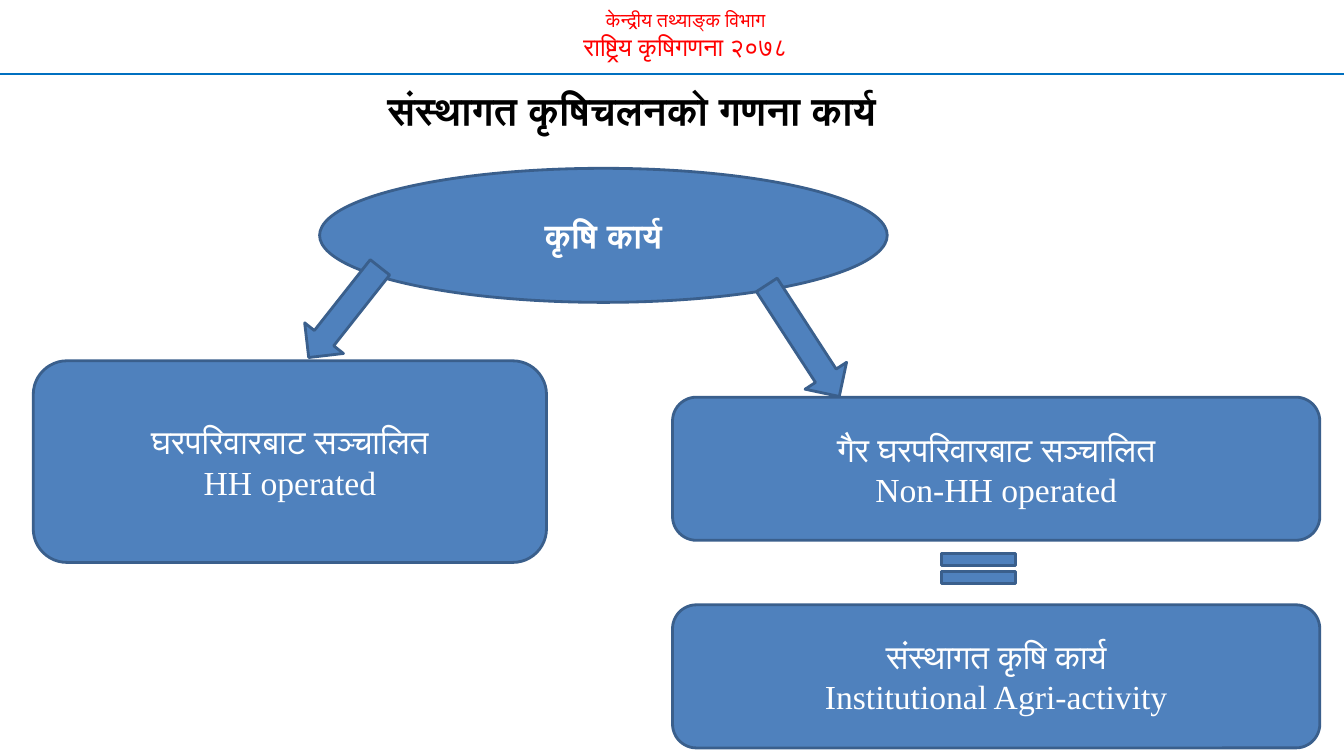
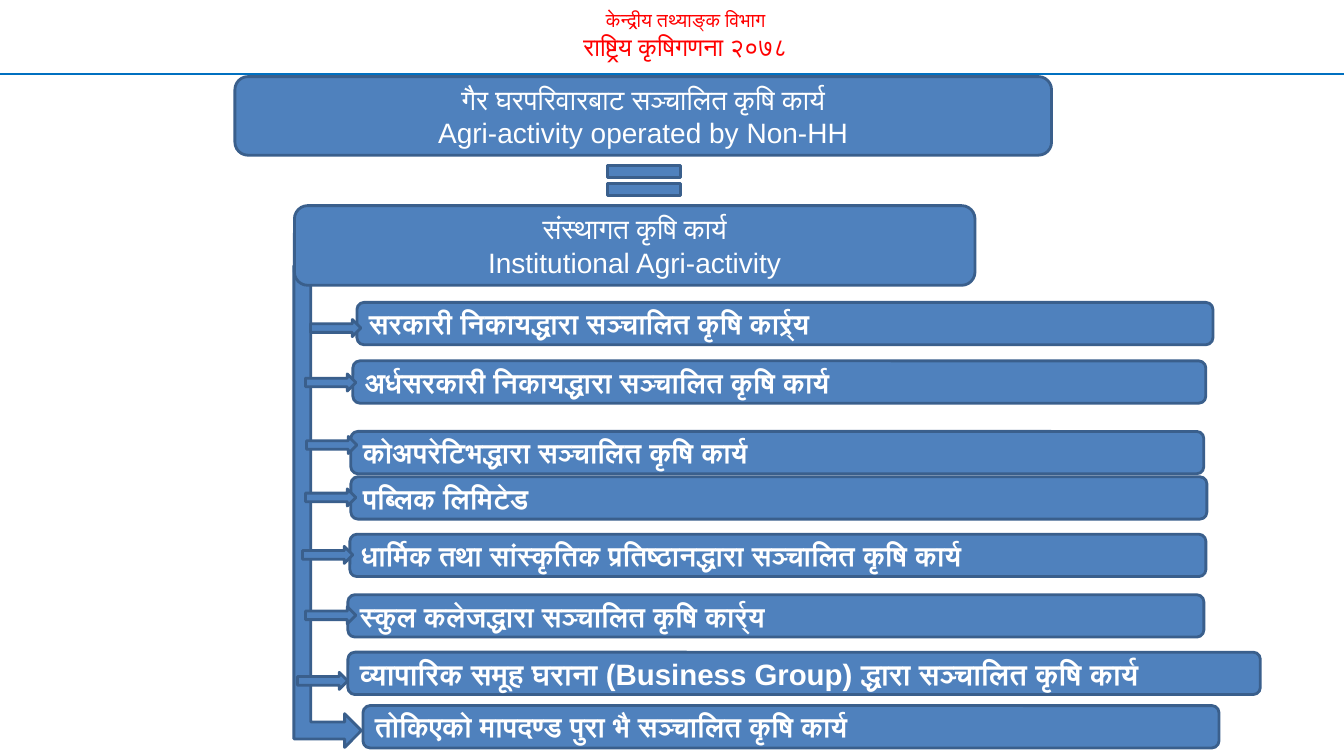
from dataclasses import dataclass
from pptx import Presentation
from pptx.dml.color import RGBColor as RGB
from pptx.enum.shapes import MSO_CONNECTOR as CONN, MSO_SHAPE as SHAPE
from pptx.enum.text import MSO_ANCHOR as ANCHOR, MSO_AUTO_SIZE as FIT, PP_ALIGN as ALIGN
from pptx.oxml.ns import qn
from pptx.util import Inches, Pt
from lxml import etree


@dataclass(frozen=True)
class Theme:
    fill: RGB = RGB.from_string("4F81BD")
    line: RGB = RGB.from_string("3A5F8C")
    rule: RGB = RGB.from_string("0070C0")
    header: RGB = RGB.from_string("FF0000")
    title: RGB = RGB.from_string("000000")
    text: RGB = RGB.from_string("FFFFFF")
    font: str = "Calibri"
    sans: str = "Arial"
    serif: str = "Times New Roman"
    title_size: int = 28
    box_size: int = 24
    bar_size: int = 20
    group_size: int = 21
    outline: float = 2
    rule_width: float = 1.5


T = Theme()
W, H = 13.33, 7.5

# Content
HEADER = [("केन्द्रीय तथ्याङ्क विभाग", 14), ("राष्ट्रिय कृषिगणना २०७८", 18)]
TITLE = "संस्थागत कृषिचलनको गणना कार्य"
ROOT = "कृषि कार्य"
INSTITUTIONAL = ("संस्थागत कृषि कार्य", "Institutional Agri-activity")
NON_HH = ("गैर घरपरिवारबाट सञ्चालित कृषि कार्य", "Agri-activity operated by Non-HH")
BRANCHES = [  # labels, box
    (("घरपरिवारबाट सञ्चालित", "HH operated"), (0.33, 3.58, 5.09, 2)),
    (("गैर घरपरिवारबाट सञ्चालित", "Non-HH operated"), (6.67, 3.94, 6.42, 1.42)),
    (INSTITUTIONAL, (6.67, 6, 6.42, 1.42)),
]
BRANCH_ARROWS = [((3.17, 2.53, 0.49, 1.14), 38.3), ((7.72, 2.72, 0.49, 1.32), 327)]
GROUP = [("व्यापारिक समूह घराना ", T.font), ("(Business Group) ", T.sans),
         ("द्धारा सञ्चालित कृषि कार्य", T.font)]
OPERATORS = [  # text, bar (left, top, width), arrow (left, top)
    ("सरकारी निकायद्धारा सञ्चालित कृषि कार्र्र्य", (3.54, 3, 8.49), (3.08, 3.17)),
    ("अर्धसरकारी निकायद्धारा सञ्चालित कृषि कार्य", (3.5, 3.58, 8.46), (3.03, 3.71)),
    ("कोअपरेटिभद्धारा सञ्चालित कृषि कार्य", (3.48, 4.28, 8.46), (3.04, 4.33)),
    ("पब्लिक लिमिटेड", (3.48, 4.73, 8.49), (3.03, 4.85)),
    ("धार्मिक तथा सांस्कृतिक प्रतिष्ठानद्धारा सञ्चालित कृषि कार्य", (3.47, 5.3, 8.49), (3, 5.42)),
    ("स्कुल कलेजद्धारा सञ्चालित कृषि कार्र्य", (3.45, 5.9, 8.49), (3.03, 6.02)),
    (GROUP, (3.45, 6.47, 9.05), (2.95, 6.67)),
    ("तोकिएको मापदण्ड पुरा भै सञ्चालित कृषि कार्य", (3.6, 7, 8.49), None),
]
BAR_H = 0.42
ARROW = (0.5, 0.17)
EQUAL = (0.99, 0.5)


def inches(box):
    return [Inches(v) for v in box]


def write(p, runs, size, color, font=T.font, bold=False, align=ALIGN.CENTER):
    """Fill one paragraph; runs is a string or a list of (text, font)."""
    p.alignment = align
    p.font.size, p.font.bold, p.font.color.rgb = Pt(size), bold, color
    if isinstance(runs, str):
        p.font.name = font
        p.add_run().text = runs
    else:
        for text, name in runs:
            r = p.add_run()
            r.text, r.font.name = text, name


def add_block(s, kind, box, rotation=0):
    sp = s.shapes.add_shape(kind, *inches(box))
    sp.shadow.inherit = False
    sp.rotation = rotation
    sp.fill.solid()
    sp.fill.fore_color.rgb = T.fill
    sp.line.color.rgb = T.line
    sp.line.width = Pt(T.outline)
    return sp


def add_pair(s, labels, box, size, fonts):
    """Rounded box with a Nepali line above an English one."""
    tf = add_block(s, SHAPE.ROUNDED_RECTANGLE, box).text_frame
    for i, (label, font) in enumerate(zip(labels, fonts)):
        p = tf.add_paragraph() if i else tf.paragraphs[0]
        write(p, label, size, T.text, font)


def add_header(prs, s):
    """Draw the header band and hand it to the slide master."""
    box = s.shapes.add_textbox(*inches((1.25, 0.03, 11.1, 0.64)))
    tf = box.text_frame
    tf.word_wrap = True
    for i, (text, size) in enumerate(HEADER):
        p = tf.add_paragraph() if i else tf.paragraphs[0]
        write(p, text, size, T.header)
    rule = s.shapes.add_connector(CONN.STRAIGHT, *inches((0, 0.73, W, 0.73)))
    rule.line.color.rgb = T.rule
    rule.line.width = Pt(T.rule_width)
    etree.SubElement(rule._element.spPr, qn("a:effectLst"))
    for part in (box, rule):
        prs.slide_master.shapes._spTree.append(part._element)


def build_overview(s):
    # Title
    title = s.shapes.title
    title.left, title.top, title.width, title.height = inches((1.87, 0.81, 8.79, 0.86))
    tf = title.text_frame
    tf.auto_size, tf.vertical_anchor = FIT.NONE, ANCHOR.TOP
    write(tf.paragraphs[0], TITLE, T.title_size, T.title, bold=True)
    # Tree
    root = add_block(s, SHAPE.OVAL, (3.17, 1.67, 5.63, 1.33))
    write(root.text_frame.paragraphs[0], ROOT, T.box_size, T.text, bold=True)
    for labels, box in BRANCHES:
        add_pair(s, labels, box, T.box_size, (T.font, T.serif))
    for box, rotation in BRANCH_ARROWS:
        add_block(s, SHAPE.DOWN_ARROW, box, rotation)
    add_block(s, SHAPE.MATH_EQUAL, (9.21, 5.39, *EQUAL))


def build_operators(s):
    # Bars
    add_pair(s, NON_HH, (2.33, 0.76, 8.1, 0.78), T.bar_size, (T.font, T.sans))
    for text, bar, _ in OPERATORS:
        sp = add_block(s, SHAPE.ROUNDED_RECTANGLE, (*bar, BAR_H))
        size = T.group_size if text is GROUP else T.bar_size
        write(sp.text_frame.paragraphs[0], text, size, T.text, bold=True, align=ALIGN.LEFT)
    # Trunk and its arrows
    add_block(s, SHAPE.BENT_UP_ARROW, (0.86, 4.69, 4.78, 0.67), 90)
    for _, _, arrow in OPERATORS:
        if arrow:
            add_block(s, SHAPE.RIGHT_ARROW, (*arrow, *ARROW))
    # Equivalence
    add_block(s, SHAPE.MATH_EQUAL, (5.89, 1.54, *EQUAL))
    add_pair(s, INSTITUTIONAL, (2.92, 2.04, 6.75, 0.79), T.bar_size, (T.font, T.sans))


def main():
    prs = Presentation()
    prs.slide_width, prs.slide_height = inches((W, H))
    title_only, blank = prs.slide_layouts[5], prs.slide_layouts[6]
    overview = prs.slides.add_slide(title_only)
    add_header(prs, overview)
    build_overview(overview)
    build_operators(prs.slides.add_slide(blank))
    prs.save("out.pptx")


if __name__ == "__main__":
    main()
